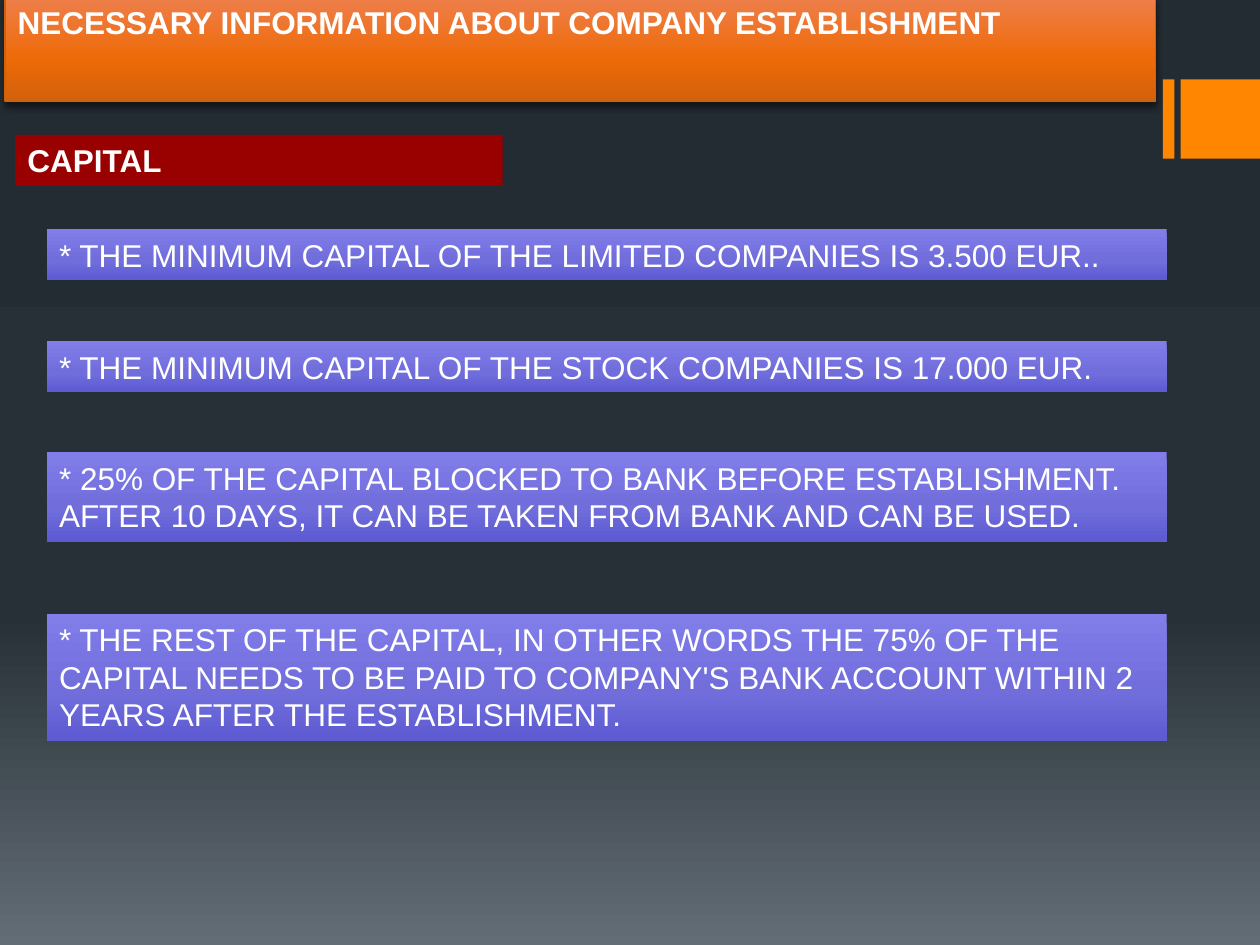
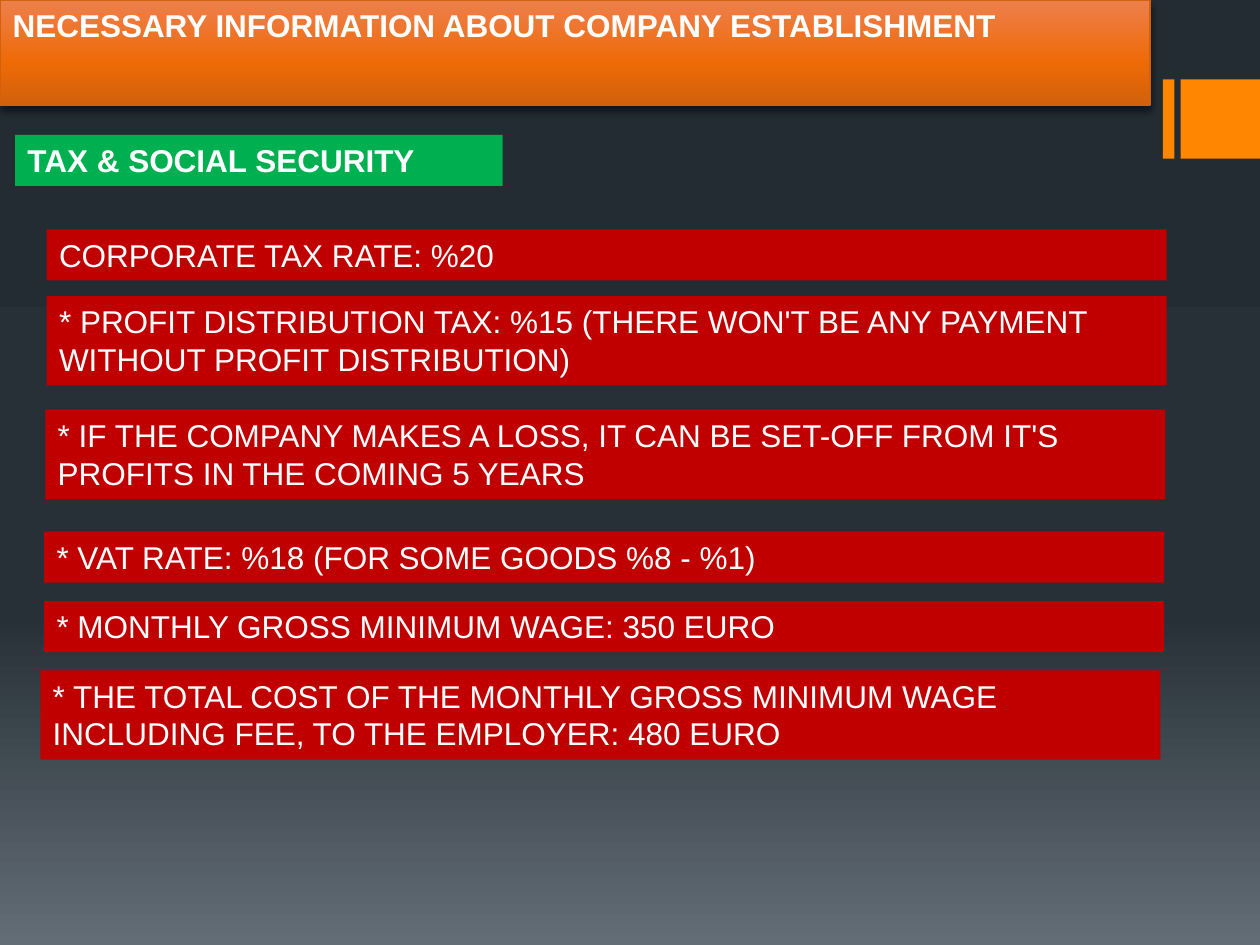
from lxml.etree import SubElement
from pptx import Presentation
from pptx.dml.color import RGBColor
from pptx.enum.shapes import MSO_SHAPE
from pptx.enum.text import MSO_ANCHOR, MSO_AUTO_SIZE, PP_ALIGN
from pptx.oxml.ns import qn
from pptx.util import Inches, Pt

HEADING = "NECESSARY INFORMATION ABOUT COMPANY ESTABLISHMENT"
NIGHT = [(0, "242C33"), (65, "273037"), (100, "636D76")]
ORANGE = [(0, "EE7F4C"), (60, "EE6A07"), (100, "D2610C")]
VIOLET = [(0, "817EEA"), (60, "716EDC"), (100, "5D5AD2")]
ACCENT, BORDER, WHITE = "FF8600", "D2610C", "FFFFFF"
CRIMSON, GREEN, RED = "990000", "00B050", "C00000"

FRAME_FORMAT = {"word_wrap": True, "vertical_anchor": MSO_ANCHOR.TOP,
                "auto_size": MSO_AUTO_SIZE.SHAPE_TO_FIT_TEXT}
PARA_FORMAT = {"alignment": PP_ALIGN.LEFT, "line_spacing": 1.0}
FONT_FORMAT = {"name": "Arial", "size": Pt(18)}

NOTE_LEFT, NOTE_TOP, NOTE_WIDTH = 0.37, 1.82, 8.89
PADDING, LINE_HEIGHT = 0.1, 0.305

CAPITAL_NOTES = [
    (0, 0, 1, "* THE MINIMUM CAPITAL OF THE LIMITED COMPANIES IS 3.500 EUR.."),
    (0, 0.89, 1, "* THE MINIMUM CAPITAL OF THE STOCK COMPANIES IS 17.000 EUR."),
    (0, 1.77, 2, "* 25% OF THE CAPITAL BLOCKED TO BANK BEFORE ESTABLISHMENT. "
                 "AFTER 10 DAYS, IT CAN BE TAKEN FROM BANK AND CAN BE USED."),
    (0, 3.05, 3, "* THE REST OF THE CAPITAL, IN OTHER WORDS THE 75% OF THE CAPITAL "
                 "NEEDS TO BE PAID TO COMPANY'S BANK ACCOUNT WITHIN 2 YEARS "
                 "AFTER THE ESTABLISHMENT."),
]
TAX_NOTES = [
    (0, 0, 1, "CORPORATE TAX RATE: %20"),
    (0, 0.53, 2, "* PROFIT DISTRIBUTION TAX: %15 (THERE WON'T BE ANY PAYMENT "
                 "WITHOUT PROFIT DISTRIBUTION)"),
    (-0.01, 1.43, 2, "* IF THE COMPANY MAKES A LOSS, IT CAN BE SET-OFF FROM IT'S "
                     "PROFITS IN THE COMING 5 YEARS"),
    (-0.02, 2.4, 1, "* VAT RATE: %18 (FOR SOME GOODS %8 - %1)"),
    (-0.02, 2.95, 1, "* MONTHLY GROSS MINIMUM WAGE: 350 EURO"),
    (-0.05, 3.5, 2, "* THE TOTAL COST OF THE MONTHLY GROSS MINIMUM WAGE "
                    "INCLUDING FEE, TO THE EMPLOYER: 480 EURO"),
]


def colour(code):
    return RGBColor.from_string(code)


def apply(target, formats):
    for name, value in formats.items():
        setattr(target, name, value)


def paint(fill, owner, paint_colour):
    if isinstance(paint_colour, str):
        fill.solid()
        fill.fore_color.rgb = colour(paint_colour)
        return
    fill.gradient()
    fill.gradient_angle = 270
    stops = owner.find(".//" + qn("a:gsLst"))
    for stop in list(stops):
        stops.remove(stop)
    for position, code in paint_colour:
        stop = SubElement(stops, qn("a:gs"), pos=str(position * 1000))
        SubElement(stop, qn("a:srgbClr"), val=code)


def cast_shadow(shape):
    shape.shadow.inherit = False
    effects = shape.element.spPr.find(qn("a:effectLst"))
    shadow = SubElement(effects, qn("a:outerShdw"), blurRad=str(Pt(3.8)),
                        dist=str(Pt(3)), dir="5400000", rotWithShape="0")
    tint = SubElement(shadow, qn("a:srgbClr"), val="000000")
    SubElement(tint, qn("a:alpha"), val="48000")


def label(shape, box, text, paint_colour, bold=False):
    left, top, width, lines = box
    frame = shape.text_frame
    apply(frame, FRAME_FORMAT)
    para = frame.paragraphs[0]
    apply(para, PARA_FORMAT)
    span = para.add_run()
    span.text = text
    apply(span.font, FONT_FORMAT | {"bold": bold})
    span.font.color.rgb = colour(WHITE)
    apply(shape, {"left": Inches(left), "top": Inches(top), "width": Inches(width),
                  "height": Inches(PADDING + lines * LINE_HEIGHT)})
    paint(shape.fill, shape.element, paint_colour)


def add_label(page, box, text, paint_colour, bold=False):
    shape = page.shapes.add_textbox(0, 0, 0, 0)
    label(shape, box, text, paint_colour, bold)


def add_banner(page, left, top):
    banner = page.shapes.title
    label(banner, (left, top, 9.13, 1), HEADING, ORANGE, True)
    banner.line.color.rgb = colour(BORDER)
    banner.line.width = Pt(1)
    cast_shadow(banner)


def add_notes(page, left, top, notes, paint_colour):
    for shift, drop, lines, text in notes:
        box = (left + shift, top + drop, NOTE_WIDTH, lines)
        add_label(page, box, text, paint_colour)


def style_master(deck, page):
    master = deck.slide_master
    paint(master.background.fill, master.element, NIGHT)
    size = 0.63
    for left, width in ((9.23, 0.09), (10 - size, size)):
        block = page.shapes.add_shape(MSO_SHAPE.RECTANGLE, Inches(left), Inches(size),
                                      Inches(width), Inches(size))
        block.shadow.inherit = False
        paint(block.fill, block.element, ACCENT)
        block.line.fill.background()
        master.element.cSld.spTree.append(block.element)


def add_topic_page(deck, banner_corner, topic, topic_colour, notes, note_colour):
    page = deck.slides.add_slide(deck.slide_layouts[5])
    add_banner(page, *banner_corner)
    add_label(page, (0.12, 1.07, 3.87, 1), topic, topic_colour, True)
    add_notes(page, NOTE_LEFT, NOTE_TOP, notes, note_colour)
    return page


def main():
    deck = Presentation()
    apply(deck, {"slide_width": Inches(10), "slide_height": Inches(7.5)})
    page = add_topic_page(deck, (0.04, -0.03), "CAPITAL", CRIMSON, CAPITAL_NOTES, VIOLET)
    style_master(deck, page)
    add_topic_page(deck, (0, 0), "TAX & SOCIAL SECURITY", GREEN, TAX_NOTES, RED)
    deck.save("out.pptx")


if __name__ == "__main__":
    main()
